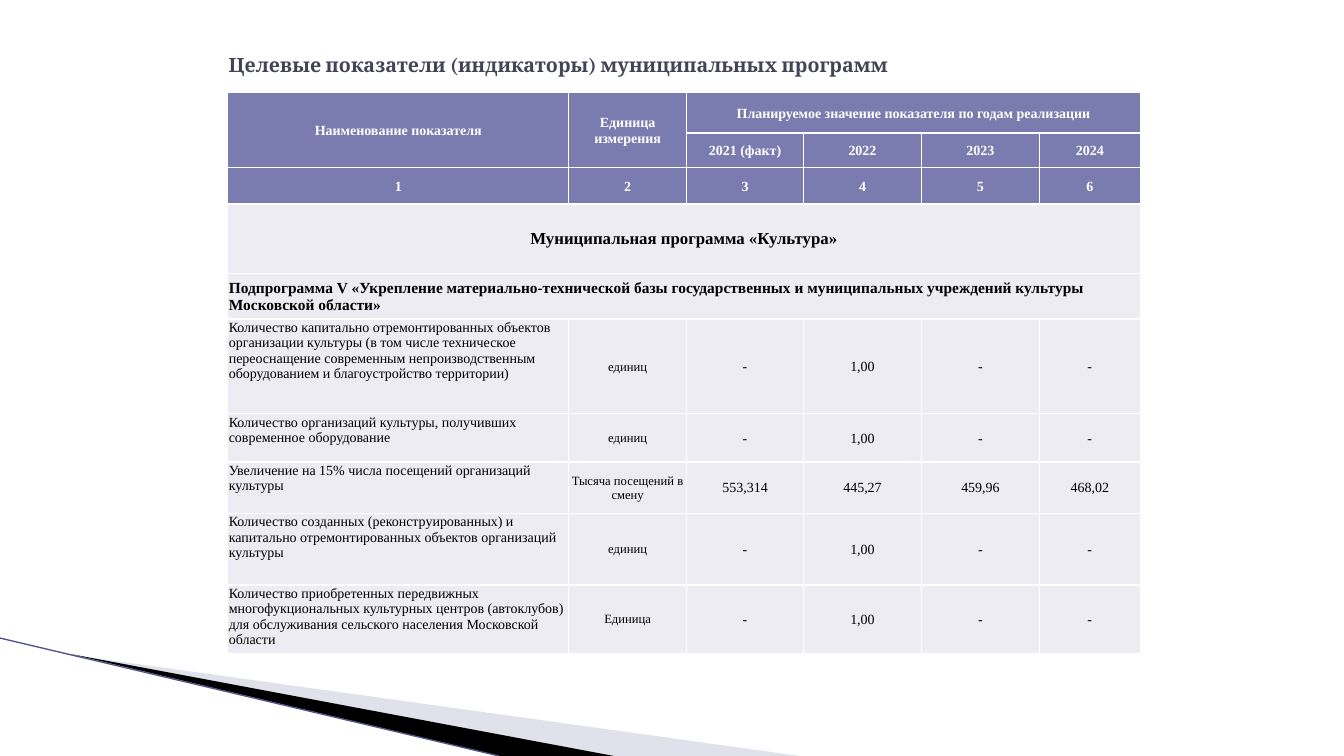
from dataclasses import dataclass
from typing import Any

from lxml.etree import SubElement as Sub
from pptx import Presentation
from pptx.dml.color import RGBColor as Rgb
from pptx.enum.shapes import MSO_CONNECTOR as Link
from pptx.enum.text import MSO_ANCHOR as Anchor, PP_ALIGN as Align
from pptx.oxml import parse_xml as to_xml
from pptx.oxml.ns import nsdecls, qn
from pptx.util import Inches, Pt


@dataclass(frozen=True)
class Theme:
    """Colours, fonts and type sizes of the slide."""
    white: str = "FFFFFF"
    black: str = "000000"
    title: str = "424456"
    head: str = "7A7BAE"
    body: str = "ECECF2"
    band: str = "B6B6D1"
    edge: str = "53548A"
    serif: str = "Cambria"
    roman: str = "Times New Roman"
    big: float = 14
    large: float = 12
    medium: float = 11
    text: float = 10
    small: float = 9


T = Theme()


@dataclass(frozen=True)
class Style:
    """Look of a piece of text and the cell behind it."""
    size: float
    ink: str
    fill: str
    bold: bool = False
    align: Any = Align.CENTER
    anchor: Any = Anchor.MIDDLE
    font: str = T.roman


@dataclass(frozen=True)
class Entry:
    """A table cell with its text, style and span."""
    row: int
    col: int
    text: str
    style: Style
    down: int = 1
    wide: int = 1


@dataclass(frozen=True)
class Wedge:
    """A filled corner shape with its opacity in percent."""
    dots: tuple[tuple[float, float], ...]
    fill: str
    alpha: int = 100


TITLE = Style(T.big, T.title, T.white, True, Align.LEFT, font=T.serif)
HEAD = Style(T.text, T.white, T.head, True)
NAME = Style(T.large, T.black, T.body, True)
GROUP = Style(T.medium, T.black, T.body, True, Align.LEFT)
LABEL = Style(T.text, T.black, T.body, align=Align.LEFT, anchor=Anchor.TOP)
UNIT = Style(T.small, T.black, T.body)
VALUE = Style(T.text, T.black, T.body)

COLS = (3.38, 1.17, 1.16, 1.17, 1.17, 1)
ROWS = (0.4, 0.32, 0.36, 0.69, 0.45, 0.94, 0.48, 0.51, 0.71, 0.63)
YEARS = ("2021 (факт)", "2022", "2023", "2024")
ONCE = ("-", "1,00", "-", "-")
DATA = (
    ("Количество капитально отремонтированных объектов организации культуры "
     "(в том числе техническое переоснащение современным непроизводственным "
     "оборудованием и благоустройство территории)", "единиц", *ONCE),
    ("Количество организаций культуры, получивших современное оборудование",
     "единиц", *ONCE),
    ("Увеличение на 15% числа посещений организаций культуры",
     "Тысяча посещений в смену", "553,314", "445,27", "459,96", "468,02"),
    ("Количество созданных (реконструированных) и капитально "
     "отремонтированных объектов организаций культуры", "единиц", *ONCE),
    ("Количество приобретенных передвижных многофукциональных культурных "
     "центров (автоклубов) для обслуживания сельского населения Московской "
     "области", "Единица", *ONCE),
)
ENTRIES = (
    Entry(0, 0, "Наименование показателя", HEAD, down=2),
    Entry(0, 1, "Единица измерения", HEAD, down=2),
    Entry(0, 2, "Планируемое значение показателя по годам реализации", HEAD,
          wide=4),
    *(Entry(1, c, year, HEAD) for c, year in enumerate(YEARS, 2)),
    *(Entry(2, c, str(c + 1), HEAD) for c in range(len(COLS))),
    Entry(3, 0, "Муниципальная программа «Культура»", NAME, wide=6),
    Entry(4, 0, "Подпрограмма V «Укрепление материально-технической базы "
          "государственных и муниципальных учреждений культуры Московской "
          "области»", GROUP, wide=6),
    *(Entry(r, c, text, {0: LABEL, 1: UNIT}.get(c, VALUE))
      for r, line in enumerate(DATA, 5) for c, text in enumerate(line)),
)
WEDGES = (
    Wedge(((0.73, 6.5), (7.93, 7.5), (6.08, 7.5)), T.band, 40),
    Wedge(((0.71, 6.49), (6.09, 7.5), (4.96, 7.5)), T.black),
)


def apply(item: Any, values: dict[str, Any]) -> None:
    """Set each named value on the item."""
    for key, value in values.items():
        setattr(item, key, value)


def write(frame: Any, text: str, style: Style) -> None:
    """Put styled text in a frame."""
    line = frame.paragraphs[0]
    line.alignment = style.align
    run = line.add_run()
    run.text = text
    apply(run.font, {"name": style.font, "size": Pt(style.size),
                     "bold": style.bold})
    run.font.color.rgb = Rgb.from_string(style.ink)


def draw_wedge(slide: Any, wedge: Wedge) -> None:
    """Draw a corner wedge."""
    dots = [(Inches(x), Inches(y)) for x, y in wedge.dots]
    pen = slide.shapes.build_freeform(*dots[0], scale=1.0)
    pen.add_line_segments(dots[1:], close=True)
    shape = pen.convert_to_shape()
    shape.shadow.inherit = False
    shape.fill.solid()
    shape.fill.fore_color.rgb = Rgb.from_string(wedge.fill)
    shape.line.fill.background()
    if wedge.alpha < 100:
        tint = shape._element.spPr.find(".//" + qn("a:srgbClr"))
        Sub(tint, qn("a:alpha"), val=str(wedge.alpha * 1000))


def draw_edge(slide: Any) -> None:
    """Draw the thin line under the wedges."""
    edge = slide.shapes.add_connector(
        Link.STRAIGHT, Inches(0), Inches(6.33), Inches(4.95), Inches(7.5))
    edge.line.color.rgb = Rgb.from_string(T.edge)
    edge.line.width = Pt(0.95)
    Sub(edge._element.spPr, qn("a:effectLst"))


def draw_title(slide: Any) -> None:
    """Draw the slide heading."""
    box = slide.shapes.add_textbox(
        Inches(2.17), Inches(0.3), Inches(9), Inches(0.69))
    apply(box.text_frame, {"word_wrap": True, "vertical_anchor": TITLE.anchor})
    write(box.text_frame, "Целевые показатели (индикаторы) муниципальных программ",
          TITLE)


def dress(cell: Any, style: Style) -> None:
    """Give a cell its fill, insets and white borders."""
    apply(cell, {"margin_left": Inches(0.01), "margin_right": Inches(0.01),
                 "margin_top": Inches(0.01), "margin_bottom": 0,
                 "vertical_anchor": style.anchor})
    cell.fill.solid()
    cell.fill.fore_color.rgb = Rgb.from_string(style.fill)
    props = cell._tc.get_or_add_tcPr()
    for i, side in enumerate("LRTB"):
        props.insert(i, to_xml(
            f'<a:ln{side} {nsdecls("a")} w="{Pt(1)}"><a:solidFill>'
            f'<a:srgbClr val="{T.white}"/></a:solidFill></a:ln{side}>'))


def draw_table(slide: Any) -> None:
    """Draw the table of targets."""
    table = slide.shapes.add_table(
        len(ROWS), len(COLS), Inches(2.26), Inches(0.92),
        Inches(sum(COLS)), Inches(sum(ROWS))).table
    for col, width in zip(table.columns, COLS):
        col.width = Inches(width)
    for row, height in zip(table.rows, ROWS):
        row.height = Inches(height)
    for e in ENTRIES:
        cell = table.cell(e.row, e.col)
        for r in range(e.row, e.row + e.down):
            for c in range(e.col, e.col + e.wide):
                dress(table.cell(r, c), e.style)
        if e.down * e.wide > 1:
            cell.merge(table.cell(e.row + e.down - 1, e.col + e.wide - 1))
        write(cell.text_frame, e.text, e.style)


def main() -> None:
    """Build and save the slide."""
    deck = Presentation()
    apply(deck, {"slide_width": Inches(13.33), "slide_height": Inches(7.5)})
    slide = deck.slides.add_slide(deck.slide_layouts[6])
    for wedge in WEDGES:
        draw_wedge(slide, wedge)
    draw_edge(slide)
    draw_title(slide)
    draw_table(slide)
    deck.save("out.pptx")


if __name__ == "__main__":
    main()
